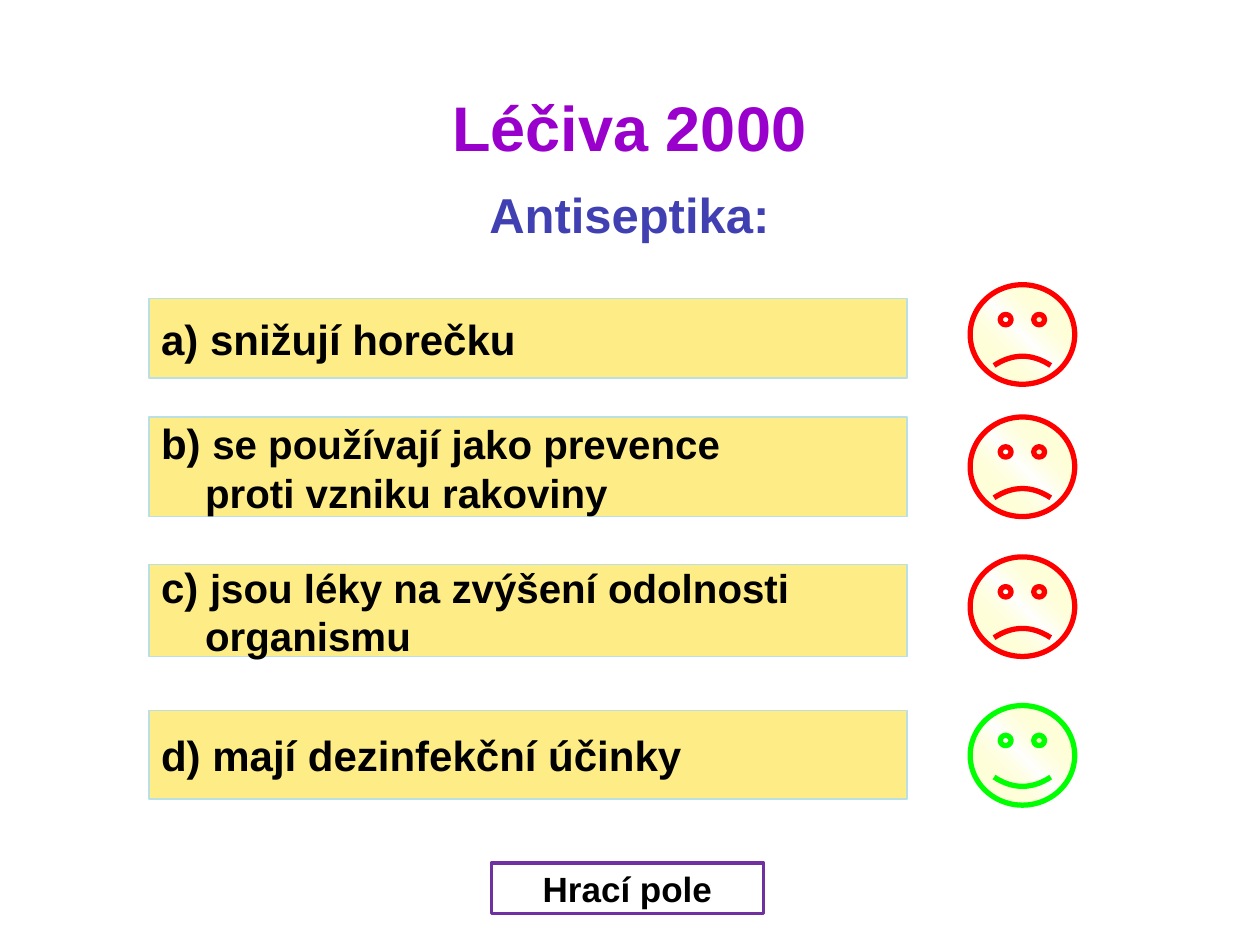
from dataclasses import dataclass
from lxml import etree
from pptx import Presentation
from pptx.dml.color import RGBColor
from pptx.enum.shapes import MSO_SHAPE
from pptx.enum.text import MSO_ANCHOR, PP_ALIGN
from pptx.oxml import parse_xml
from pptx.oxml.ns import qn
from pptx.util import Inches, Pt

BUTTON, FACE = MSO_SHAPE.ACTION_BUTTON_CUSTOM, MSO_SHAPE.SMILEY_FACE
LEFT, CENTER = PP_ALIGN.LEFT, PP_ALIGN.CENTER
MIDDLE = MSO_ANCHOR.MIDDLE
W, H = 10, 7.5
COLORS = {"title": "9900CC", "question": "4040B3", "text": "000000",
          "answer": "FEED86", "edge": "BBE0E3", "white": "FFFFFF",
          "nav": "7030A0", "wrong": "FF0000", "right": "00FF00",
          "glow": "FFFF66"}

# Shared columns, as shares of the slide width
ANSWER_X, ANSWER_W = 0.118, 0.602
FACE_X, FACE_W, FACE_H = 0.77, 0.083, 0.79 / H
SMILE = 0.047
HANG = 0.35  # indent of an answer's second line, inches


@dataclass
class Box:
    x: float
    y: float
    w: float
    h: float

    def emu(self) -> tuple:
        return (Inches(self.x * W), Inches(self.y * H),
                Inches(self.w * W), Inches(self.h * H))


@dataclass
class Answer:
    y: float
    h: float
    face_y: float
    label: str
    lines: tuple
    size: int = 24
    correct: bool = False


ANSWERS = [
    Answer(2.37 / H, 0.63 / H, 2.26 / H, "a) ", ("snižují horečku",)),
    Answer(3.31 / H, 0.79 / H, 3.31 / H, "b) ",
           ("se používají jako prevence", "proti vzniku rakoviny"), 23),
    Answer(4.48 / H, 0.73 / H, 4.42 / H, "c) ",
           ("jsou léky na zvýšení odolnosti", "organismu"), 23),
    Answer(5.64 / H, 0.7 / H, 5.6 / H, "d) ", ("mají dezinfekční účinky",),
           correct=True),
]


def rgb(name: str) -> RGBColor:
    return RGBColor.from_string(COLORS[name])


def add_run(p, text: str, size: int, color: str = "text") -> None:
    r = p.add_run()
    r.text = text
    fmt = {"name": "Arial", "size": Pt(size), "bold": True}
    for key, value in fmt.items():
        setattr(r.font, key, value)
    r.font.color.rgb = rgb(color)


def add_shape(s, kind, box: Box, line: str, width: float):
    sp = s.shapes.add_shape(kind, *box.emu())
    sp.shadow.inherit = False
    sp.line.color.rgb = rgb(line)
    sp.line.width = Pt(width)
    return sp


def add_button(s, box: Box, fill: str, line: str, width: float):
    sp = add_shape(s, BUTTON, box, line, width)
    sp.fill.solid()
    sp.fill.fore_color.rgb = rgb(fill)
    sp.text_frame.word_wrap = True
    sp.text_frame.vertical_anchor = MIDDLE
    return sp.text_frame


def add_answer(s, answer: Answer) -> None:
    tf = add_button(s, Box(ANSWER_X, answer.y, ANSWER_W, answer.h),
                    "answer", "edge", 1)
    for i, line in enumerate(answer.lines):
        p = tf.add_paragraph() if i else tf.paragraphs[0]
        p.alignment = LEFT
        if i:
            p._p.get_or_add_pPr().set("marL", str(Inches(HANG)))
        else:
            add_run(p, answer.label, 24)
        add_run(p, line, answer.size)


def add_face(s, answer: Answer) -> None:
    sp = add_shape(s, FACE, Box(FACE_X, answer.face_y, FACE_W, FACE_H),
                   "right" if answer.correct else "wrong", 3)
    sp.adjustments[0] = SMILE if answer.correct else -SMILE
    # Diagonal gradient with a transparent middle stop
    sp.fill.gradient()
    grad = sp._element.spPr.find(qn("a:gradFill"))
    ns = grad.nsmap["a"]
    stops = grad.find(qn("a:gsLst"))
    for gs in list(stops):
        stops.remove(gs)
    for pos, color, alpha in ((0, "white", 100), (50, "glow", 0),
                              (100, "white", 100)):
        stops.append(parse_xml(
            f'<a:gs xmlns:a="{ns}" pos="{pos * 1000}">'
            f'<a:srgbClr val="{COLORS[color]}">'
            f'<a:alpha val="{alpha * 1000}"/></a:srgbClr></a:gs>'))
    for lin in grad.findall(qn("a:lin")):
        grad.remove(lin)
    etree.SubElement(grad, qn("a:lin"), ang=str(315 * 60000), scaled="1")


def add_heading(s) -> None:
    tf = s.shapes.add_textbox(*Box(0.039, 0.087, 0.921, 0.1).emu()).text_frame
    tf.word_wrap = True
    title, question = tf.paragraphs[0], tf.add_paragraph()
    question.space_before = Pt(12)
    for p, text, size, color in ((title, "Léčiva 2000", 36, "title"),
                                 (question, "Antiseptika:", 28, "question")):
        p.alignment = CENTER
        add_run(p, text, size, color)


def main() -> None:
    prs = Presentation()
    prs.slide_width, prs.slide_height = Inches(W), Inches(H)
    s = prs.slides.add_slide(prs.slide_layouts[6])

    # Title and question
    add_heading(s)

    # Answers, each with its verdict
    for answer in ANSWERS:
        add_answer(s, answer)
        add_face(s, answer)

    # Button back to the game board
    tf = add_button(s, Box(0.39, 6.85 / H, 0.216, 0.4 / H),
                    "white", "nav", 2)
    p = tf.paragraphs[0]
    p.alignment = CENTER
    add_run(p, "Hrací pole", 20)

    prs.save("out.pptx")


if __name__ == "__main__":
    main()
